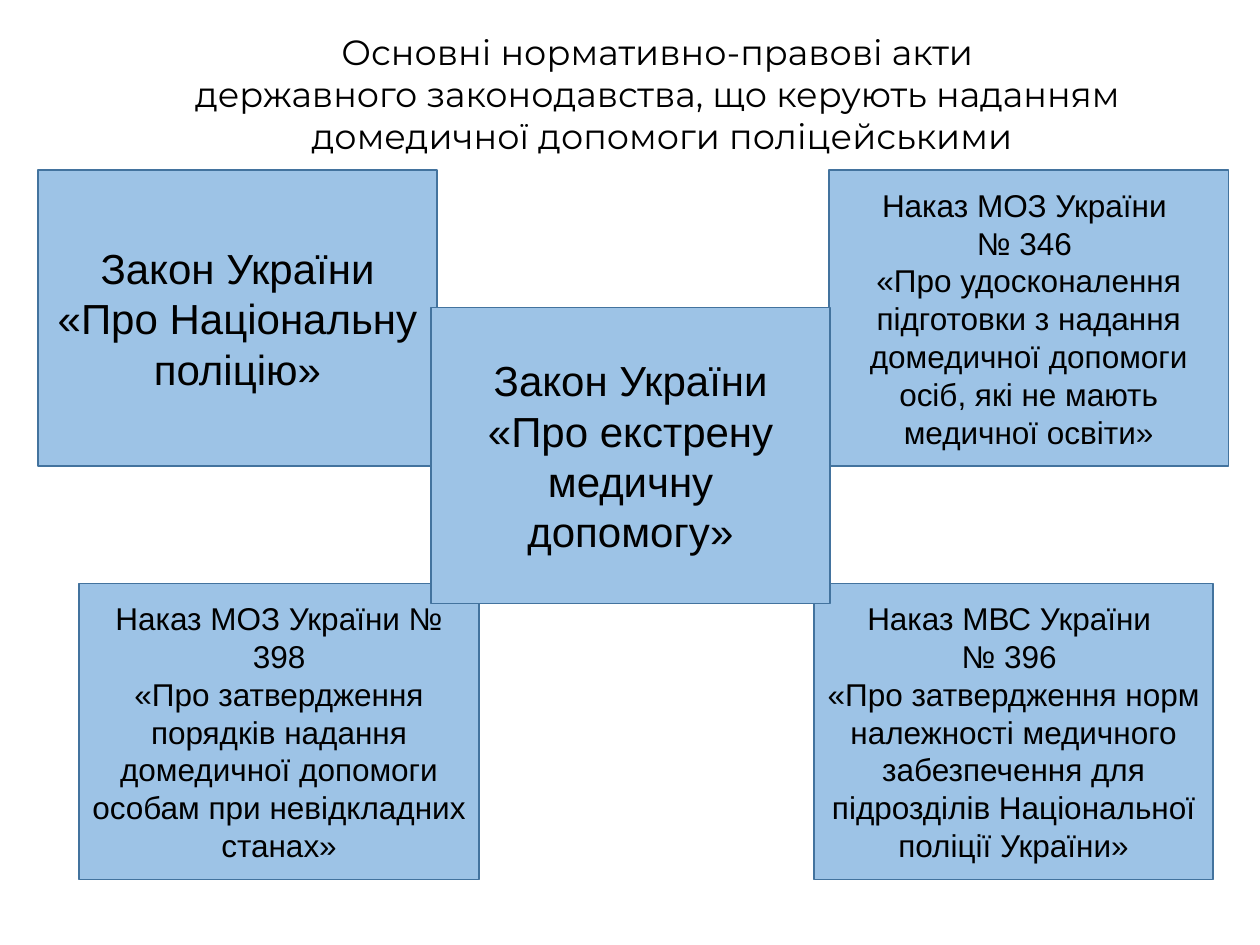
from dataclasses import dataclass

from pptx import Presentation
from pptx import util as u
from pptx.dml.color import RGBColor
from pptx.enum import shapes, text


@dataclass(frozen=True)
class Theme:
    fill: RGBColor = RGBColor(0x9D, 0xC3, 0xE6)
    line: RGBColor = RGBColor(0x43, 0x73, 0x9E)
    ink: RGBColor = RGBColor(0, 0, 0)
    title_font: str = "Montserrat"
    body_font: str = "Arial"
    title_size: int = 20
    law_size: int = 24
    order_size: int = 18


@dataclass(frozen=True)
class Act:
    left: float
    top: float
    size: int
    lines: tuple[str, ...]


THEME = Theme()
BOX_W, BOX_H = 3.17, 2.35
TOP_ROW, MIDDLE_ROW, BOTTOM_ROW = 1.35, 2.44, 4.63

TITLE = (
    "Основні нормативно-правові акти ",
    "державного законодавства, що керують наданням ",
    "домедичної допомоги поліцейськими",
)

# Back to front: the central law overlaps its neighbours
ACTS = (
    Act(0.3, TOP_ROW, THEME.law_size, ("Закон України «Про Національну поліцію»",)),
    Act(6.46, BOTTOM_ROW, THEME.order_size, (
        "Наказ МВС України ", "№ 396 ",
        "«Про затвердження норм належності медичного забезпечення для "
        "підрозділів Національної поліції України»")),
    Act(6.58, TOP_ROW, THEME.order_size, (
        "Наказ МОЗ України ", "№ 346 ",
        "«Про удосконалення підготовки з надання домедичної допомоги "
        "осіб, які не мають медичної освіти»")),
    Act(0.63, BOTTOM_ROW, THEME.order_size, (
        "Наказ МОЗ України № 398",
        "«Про затвердження порядків надання домедичної допомоги "
        "особам при невідкладних станах»")),
    Act(3.42, MIDDLE_ROW, THEME.law_size, ("Закон України «Про екстрену медичну допомогу»",)),
)


def write(tf, lines: tuple[str, ...], font: str, size: int) -> None:
    """Fill a text frame with centred paragraphs in one format."""
    tf.word_wrap = True
    tf.vertical_anchor = text.MSO_ANCHOR.MIDDLE
    formats = {"name": font, "size": u.Pt(size)}
    for i, line in enumerate(lines):
        p = tf.paragraphs[0] if i == 0 else tf.add_paragraph()
        p.alignment = text.PP_ALIGN.CENTER
        r = p.add_run()
        r.text = line
        for key, value in formats.items():
            setattr(r.font, key, value)
        r.font.color.rgb = THEME.ink


def add_title(s) -> None:
    sp = s.shapes.title
    place = {"left": 1.07, "top": 0.19, "width": 8.37, "height": 1.11}
    for key, value in place.items():
        setattr(sp, key, u.Inches(value))
    write(sp.text_frame, TITLE, THEME.title_font, THEME.title_size)
    sp.text_frame.auto_size = text.MSO_AUTO_SIZE.NONE


def add_act(s, act: Act) -> None:
    sp = s.shapes.add_shape(
        shapes.MSO_SHAPE.RECTANGLE,
        *(u.Inches(v) for v in (act.left, act.top, BOX_W, BOX_H)))
    sp.shadow.inherit = False
    sp.fill.solid()
    sp.fill.fore_color.rgb = THEME.fill
    sp.line.color.rgb = THEME.line
    sp.line.width = u.Pt(1)
    write(sp.text_frame, act.lines, THEME.body_font, act.size)


def main() -> None:
    prs = Presentation()
    prs.slide_width, prs.slide_height = u.Inches(10), u.Inches(7.5)
    s = prs.slides.add_slide(prs.slide_layouts.get_by_name("Title Only"))

    # Heading, then the five legal acts
    add_title(s)
    for act in ACTS:
        add_act(s, act)

    prs.save("out.pptx")


if __name__ == "__main__":
    main()
